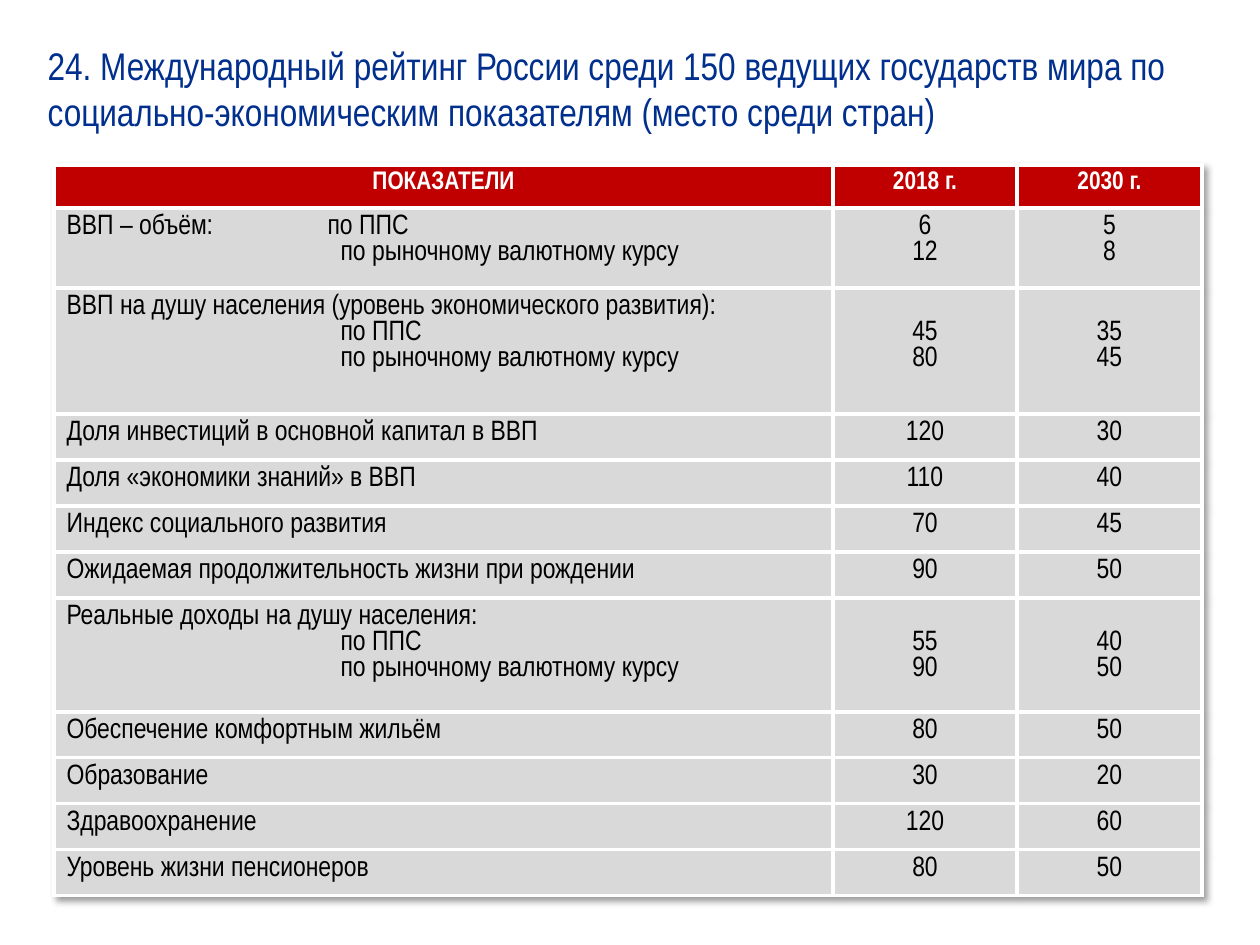
from pptx import Presentation
from pptx.dml.color import RGBColor as RGB
from pptx.enum.text import MSO_ANCHOR as Anchor, PP_ALIGN as Align
from pptx.oxml import parse_xml
from pptx.oxml.ns import nsdecls
from pptx.util import Emu, Pt

# Content: labels, 2018 ranks, 2030 ranks, row height in px
TITLE = ("24. Международный рейтинг России среди 150 ведущих государств мира "
         "по социально-экономическим показателям (место среди стран)")
HEAD = ["ПОКАЗАТЕЛИ", "2018 г.", "2030 г."]
PPP, RATE = "по ППС", "по рыночному валютному курсу"
ROWS = [
    (["ВВП – объём:\t" + PPP, RATE], [6, 12], [5, 8], 80),
    (["ВВП на душу населения (уровень экономического развития):", PPP, RATE],
     [45, 80], [35, 45], 126),
    (["Доля инвестиций в основной капитал в ВВП"], [120], [30], 46),
    (["Доля «экономики знаний» в ВВП"], [110], [40], 46),
    (["Индекс социального развития"], [70], [45], 46),
    (["Ожидаемая продолжительность жизни при рождении"], [90], [50], 46),
    (["Реальные доходы на душу населения:", PPP, RATE],
     [55, 90], [40, 50], 114),
    (["Обеспечение комфортным жильём"], [80], [50], 46),
    (["Образование"], [30], [20], 46),
    (["Здравоохранение"], [120], [60], 46),
    (["Уровень жизни пенсионеров"], [80], [50], 46),
]

THEME = {
    "font": "Arial Narrow", "title": "002F8E", "head": "C00000",
    "body": "D9D9D9", "white": "FFFFFF", "black": "000000",
    "title_pt": 22, "head_pt": 14.5, "body_pt": 16, "rule_pt": 2.25,
}

# Layout in px
SCALE = 914400 // 126
WIDE, HIGH = 1260, 945
TITLE_BOX = (35, 35, 1167, 107)
LEFT, TOP = 54, 165
COLS = [779, 184, 185]
HEAD_H, PAD, LINE = 43, 6, 26
INDENT, TAB = 274, 261


def px(n):
    return Emu(n * SCALE)


def style(par, size, color, bold=False):
    for run in par.runs:
        font = run.font
        font.name, font.size, font.bold = THEME["font"], Pt(size), bold
        font.color.rgb = RGB.from_string(color)


def border(cell):
    props = cell._tc.get_or_add_tcPr()
    for i, side in enumerate("LRTB"):
        props.insert(i, parse_xml(
            f'<a:ln{side} {nsdecls("a")} w="{Pt(THEME["rule_pt"])}"><a:solidFill>'
            f'<a:srgbClr val="{THEME["white"]}"/></a:solidFill></a:ln{side}>'))


def fill_cell(cell, lines, fill, size, color, center, bold=False, skip=0):
    cell.fill.solid()
    cell.fill.fore_color.rgb = RGB.from_string(fill)
    border(cell)
    cell.margin_top = px(PAD + skip * LINE)
    cell.margin_bottom = px(PAD)
    cell.text_frame.text = "\n".join(map(str, lines))
    for i, par in enumerate(cell.text_frame.paragraphs):
        par.alignment = Align.CENTER if center else Align.LEFT
        style(par, size, color, bold)
        props = par._p.get_or_add_pPr()
        if not center and i:
            props.set("marL", str(px(INDENT)))
        if "\t" in par.text:
            props.append(parse_xml(
                f'<a:tabLst {nsdecls("a")}><a:tab pos="{px(TAB)}" algn="l"/></a:tabLst>'))


def add_title(slide):
    title = slide.shapes.title
    title.left, title.top, title.width, title.height = map(px, TITLE_BOX)
    frame = title.text_frame
    frame.text, frame.word_wrap = TITLE, True
    frame.vertical_anchor = Anchor.MIDDLE
    frame.paragraphs[0].alignment = Align.LEFT
    style(frame.paragraphs[0], THEME["title_pt"], THEME["title"])


def add_ranks(slide):
    highs = [HEAD_H] + [row[-1] for row in ROWS]
    table = slide.shapes.add_table(
        len(highs), len(COLS), px(LEFT), px(TOP), px(sum(COLS)), px(sum(highs))).table
    for col, wide in zip(table.columns, COLS):
        col.width = px(wide)
    for row, high in zip(table.rows, highs):
        row.height = px(high)

    # Soft shadow behind the whole table
    table._tbl.tblPr.insert(0, parse_xml(
        f'<a:effectLst {nsdecls("a")}><a:outerShdw blurRad="50800" dist="38100" '
        'dir="2700000" algn="tl" rotWithShape="0"><a:srgbClr val="000000">'
        '<a:alpha val="40000"/></a:srgbClr></a:outerShdw></a:effectLst>'))

    for c, text in enumerate(HEAD):
        fill_cell(table.cell(0, c), [text], THEME["head"], THEME["head_pt"],
                  THEME["white"], True, bold=True)
    # Ranks line up with the last lines of their label
    for r, (*cells, _) in enumerate(ROWS, 1):
        for c, lines in enumerate(cells):
            fill_cell(table.cell(r, c), lines, THEME["body"], THEME["body_pt"],
                      THEME["black"], c > 0, skip=len(cells[0]) - len(lines))


def main():
    deck = Presentation()
    deck.slide_width, deck.slide_height = px(WIDE), px(HIGH)
    slide = deck.slides.add_slide(deck.slide_layouts[5])
    add_title(slide)
    add_ranks(slide)
    deck.save("out.pptx")


if __name__ == "__main__":
    main()
